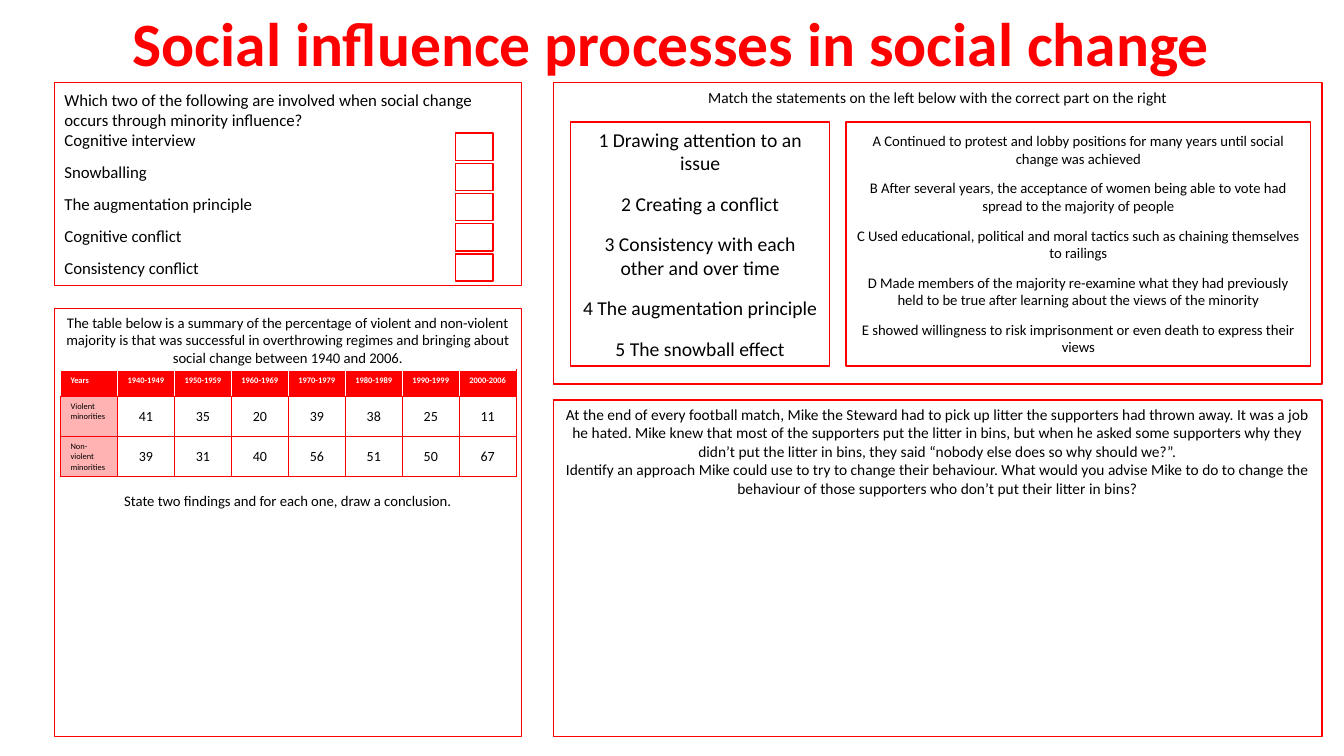
from dataclasses import dataclass

from pptx import Presentation
from pptx.dml.color import RGBColor
from pptx.enum.shapes import MSO_SHAPE as Preset
from pptx.enum.text import MSO_ANCHOR as Anchor, PP_ALIGN as Align
from pptx.oxml import parse_xml
from pptx.oxml.ns import nsdecls
from pptx.util import Inches, Pt


@dataclass(frozen=True)
class Theme:
    font: str = "Calibri"
    accent: str = "FF0000"
    tint: str = "FFB3B3"
    ink: str = "000000"
    paper: str = "FFFFFF"
    title: float = 44
    statement: float = 14
    question: float = 12
    task: float = 11
    small: float = 10.5
    value: float = 10
    label: float = 6
    line: float = 1


class Worksheet:
    def __init__(self, slide, theme):
        self.slide = slide
        self.theme = theme

    def set_text(self, frame, lines, size, align=Align.CENTER, gaps=(), color=None, bold=False):
        frame.word_wrap = True
        for index, line in enumerate(lines):
            paragraph = frame.paragraphs[0] if index == 0 else frame.add_paragraph()
            paragraph.text = line
            paragraph.alignment = align
            if index and gaps:
                paragraph.space_before = Pt(gaps[index - 1])
            font = paragraph.font
            font.name = self.theme.font
            font.size = Pt(size)
            font.bold = bold
            font.color.rgb = RGBColor.from_string(color or self.theme.ink)

    def heading(self, text, left, top, width, height):
        box = self.slide.shapes.add_textbox(*map(Inches, (left, top, width, height)))
        self.set_text(box.text_frame, [text], self.theme.title, color=self.theme.accent, bold=True)

    def panel(self, left, top, width, height, lines=(), size=None,
              align=Align.CENTER, anchor=Anchor.TOP, gaps=()):
        shape = self.slide.shapes.add_shape(
            Preset.RECTANGLE, *map(Inches, (left, top, width, height)))
        shape.shadow.inherit = False
        shape.fill.solid()
        shape.fill.fore_color.rgb = RGBColor.from_string(self.theme.paper)
        shape.line.color.rgb = RGBColor.from_string(self.theme.accent)
        shape.line.width = Pt(self.theme.line)
        shape.text_frame.vertical_anchor = anchor
        self.set_text(shape.text_frame, lines, size, align, gaps)

    def border(self, cell, colors):
        properties = cell._tc.get_or_add_tcPr()
        for side, color in zip("LRTB", colors):
            properties.append(parse_xml(
                f'<a:ln{side} {nsdecls("a")} w="{Pt(self.theme.line)}"><a:solidFill>'
                f'<a:srgbClr val="{color}"/></a:solidFill></a:ln{side}>'))

    def cell(self, cell, text, is_header, is_label, is_last):
        theme = self.theme
        if is_header:
            right = theme.accent if is_last else theme.paper
            self.border(cell, (theme.paper, right, theme.paper, theme.accent))
        else:
            self.border(cell, (theme.accent,) * 4)
        if is_header or is_label:
            cell.fill.solid()
            cell.fill.fore_color.rgb = RGBColor.from_string(
                theme.accent if is_header else theme.tint)
            self.set_text(cell.text_frame, [text], theme.label, Align.LEFT,
                          color=theme.paper if is_header else theme.ink, bold=is_header)
        else:
            cell.fill.background()
            cell.vertical_anchor = Anchor.MIDDLE
            self.set_text(cell.text_frame, [text], theme.value)

    def table(self, left, top, width, row_heights, rows):
        columns = len(rows[0])
        table = self.slide.shapes.add_table(
            len(rows), columns,
            *map(Inches, (left, top, width, sum(row_heights)))).table
        table.horz_banding = False
        for column in table.columns:
            column.width = Inches(width / columns)
        for r, (height, values) in enumerate(zip(row_heights, rows)):
            table.rows[r].height = Inches(height)
            for c, value in enumerate(values):
                self.cell(table.cell(r, c), str(value), r == 0, c == 0, c == columns - 1)


INFLUENCE_OPTIONS = [
    "Which two of the following are involved when social change occurs through minority influence?",
    "Cognitive interview",
    "Snowballing",
    "The augmentation principle",
    "Cognitive conflict",
    "Consistency conflict",
]
LITTER_TASK = [
    "At the end of every football match, Mike the Steward had to pick up litter the supporters "
    "had thrown away. It was a job he hated. Mike knew that most of the supporters put the litter "
    "in bins, but when he asked some supporters why they didn’t put the litter in bins, they said "
    "“nobody else does so why should we?”.",
    "Identify an approach Mike could use to try to change their behaviour. What would you advise "
    "Mike to do to change the behaviour of those supporters who don’t put their litter in bins?",
]
MATCHING_TASK = ["Match the statements on the left below with the correct part on the right"]
REGIME_TASK = [
    "The table below is a summary of the percentage of violent and non-violent majority is that "
    "was successful in overthrowing regimes and bringing about social change between 1940 and 2006.",
    "State two findings and for each one, draw a conclusion.",
]
REGIME_ROWS = [
    ["Years", "1940-1949", "1950-1959", "1960-1969", "1970-1979", "1980-1989", "1990-1999", "2000-2006"],
    ["Violent minorities", 41, 35, 20, 39, 38, 25, 11],
    ["Non-violent minorities", 39, 31, 40, 56, 51, 50, 67],
]
PROCESSES = [
    "1 Drawing attention to an issue",
    "2 Creating a conflict",
    "3 Consistency with each other and over time",
    "4 The augmentation principle",
    "5 The snowball effect",
]
EXAMPLES = [
    "A Continued to protest and lobby positions for many years until social change was achieved",
    "B After several years, the acceptance of women being able to vote had spread to the majority of people",
    "C Used educational, political and moral tactics such as chaining themselves to railings",
    "D Made members of the majority re-examine what they had previously held to be true after "
    "learning about the views of the minority",
    "E showed willingness to risk imprisonment or even death to express their views",
]


def main():
    deck = Presentation()
    deck.slide_width = Inches(13.33)
    deck.slide_height = Inches(7.5)
    theme = Theme()
    sheet = Worksheet(deck.slides.add_slide(deck.slide_layouts[6]), theme)

    sheet.panel(0.54, 0.82, 4.63, 2.01, INFLUENCE_OPTIONS, theme.question,
                Align.LEFT, Anchor.MIDDLE, (0, 8.5, 8.5, 8.5, 8.5))
    sheet.panel(5.49, 3.97, 7.62, 3.34, LITTER_TASK, theme.task)
    sheet.panel(5.49, 0.82, 7.62, 2.99, MATCHING_TASK, theme.task)
    sheet.panel(0.54, 3.06, 4.63, 4.25, REGIME_TASK, theme.small, gaps=(89.5,))
    for option in range(5):
        sheet.panel(4.52, 1.32 + option * 0.3, 0.37, 0.27)
    sheet.heading("Social influence processes in social change", 0, 0, 13.33, 0.84)
    sheet.table(0.6, 3.67, 4.52, (0.26, 0.4, 0.4), REGIME_ROWS)
    sheet.panel(5.66, 1.21, 2.57, 2.42, PROCESSES, theme.statement,
                anchor=Anchor.MIDDLE, gaps=(12.2,) * 4)
    sheet.panel(8.39, 1.21, 4.61, 2.42, EXAMPLES, theme.small,
                anchor=Anchor.MIDDLE, gaps=(8.5,) * 4)

    deck.save("out.pptx")


if __name__ == "__main__":
    main()
